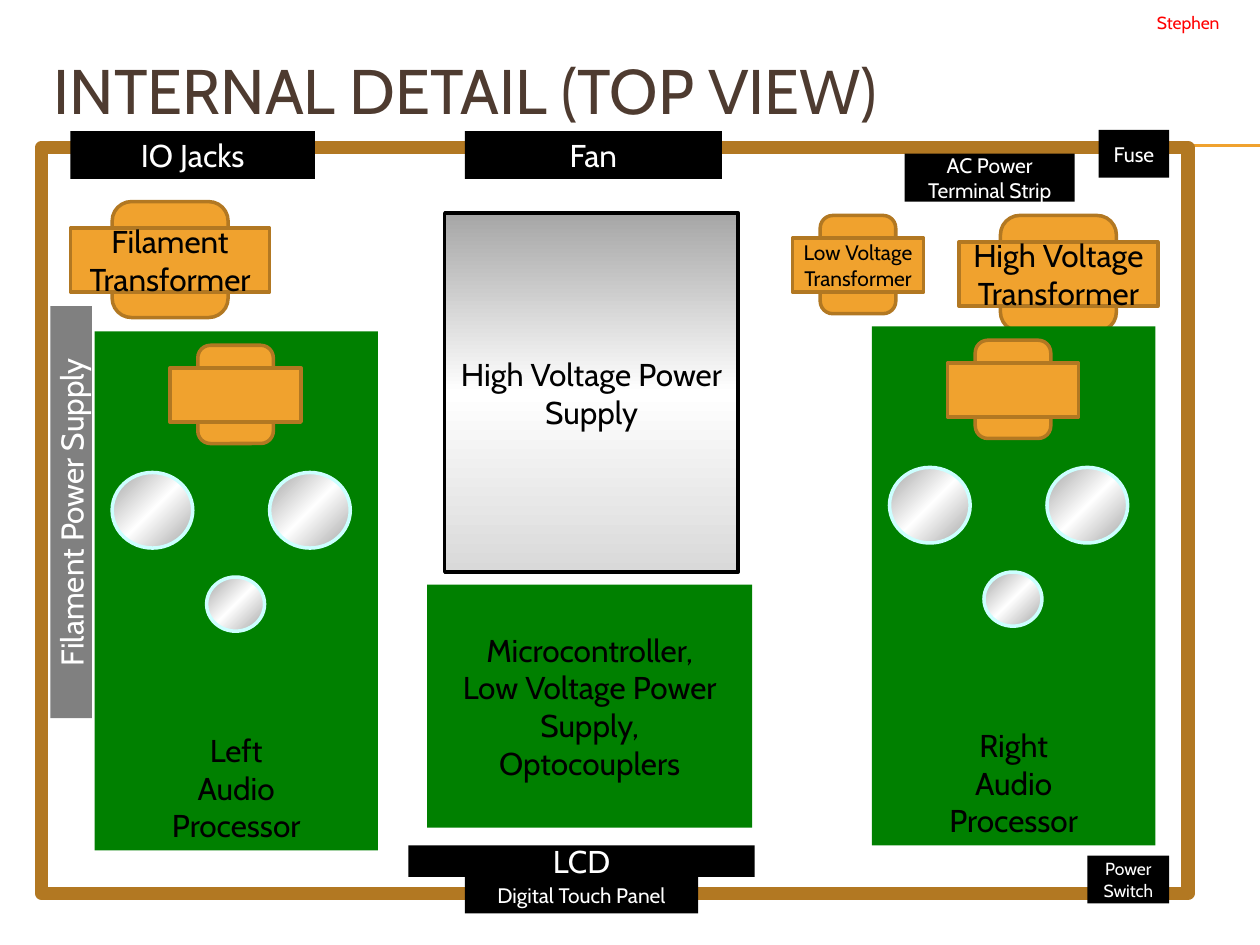
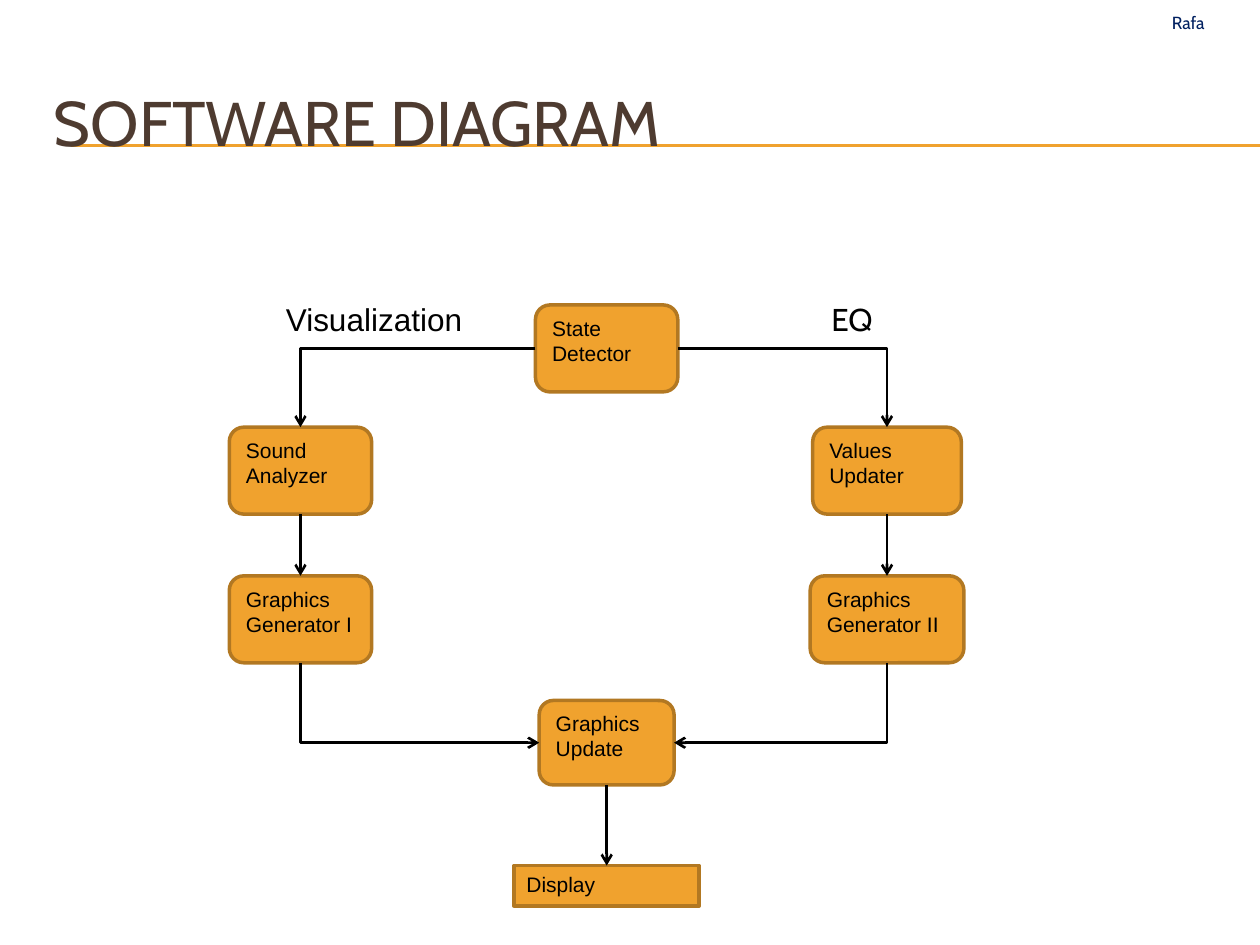
from pptx import Presentation
from pptx.dml.color import RGBColor
from pptx.enum.shapes import MSO_CONNECTOR, MSO_SHAPE
from pptx.enum.text import MSO_ANCHOR, PP_ALIGN
from pptx.oxml import parse_xml
from pptx.oxml.ns import nsdecls, qn
from pptx.util import Inches, Pt

BLACK, WHITE, RED, NAVY = "000000", "FFFFFF", "FF0000", "002060"
AMBER, BROWN, GREEN, GREY = "F0A22E", "B27822", "008000", "808080"
RIM, TITLE = "CCFFFF", "4E3B30"
RECT, ROUND, OVAL = MSO_SHAPE.RECTANGLE, MSO_SHAPE.ROUNDED_RECTANGLE, MSO_SHAPE.OVAL
LEFT, CENTER, JUSTIFY = PP_ALIGN.LEFT, PP_ALIGN.CENTER, PP_ALIGN.JUSTIFY
TOP, MIDDLE, BOTTOM = MSO_ANCHOR.TOP, MSO_ANCHOR.MIDDLE, MSO_ANCHOR.BOTTOM
MARGINS = ("margin_left", "margin_top", "margin_right", "margin_bottom")

# Gradients: stops as (percent, colour), then the direction
STEEL = ([(0, "A6A6A6"), (50, WHITE), (100, "D9D9D9")],
         '<a:lin ang="5400000" scaled="0"/>')
GLASS = ([(0, "A6A6A6"), (50, WHITE), (100, "A6A6A6")],
         '<a:path path="circle"><a:fillToRect l="100000" t="100000"/></a:path>')

# Internal detail: label, box (left, top, width, height), text size
PANELS = [
    ("Digital Touch Panel", (3.69, 6.96, 1.85, 0.29), 12),
    ("IO Jacks", (0.56, 1.04, 1.94, 0.38), 18),
    ("Fan", (3.69, 1.04, 2.04, 0.38), 18),
    ("AC Power\nTerminal Strip", (7.18, 1.22, 1.35, 0.38), 12),
    ("Fuse", (8.72, 1.03, 0.56, 0.38), 12),
    ("LCD", (3.24, 6.71, 2.75, 0.25), 18),
    ("Power Switch", (8.63, 6.79, 0.65, 0.38), 10),
]
# Transformer sizes: core (offset and size), coil size, text size, margin
LARGE = ((0.33, -0.21, 0.92, 0.92), (1.58, 0.51), 18, None)
SMALL = ((0.22, -0.18, 0.6, 0.78), (1.04, 0.43), 12, 0)
COILS = [
    ("High Voltage Transformer", 7.61, 1.92, LARGE),
    ("Low Voltage Transformer", 6.29, 1.89, SMALL),
    ("Filament\nTransformer", 0.56, 1.81, LARGE),
]
BOARDS = [("Left\nAudio\nProcessor", 0.75, 2.63), ("Right\nAudio\nProcessor", 6.92, 2.59)]
TUBES = [(0.14, 1.12, 0.64, 0.6), (1.39, 1.12, 0.64, 0.6), (0.89, 1.95, 0.46, 0.43)]

# Software diagram
STEPS = {
    "Graphics Update": (4.28, 5.56, 1.07, 0.67),
    "Graphics Generator II": (6.43, 4.57, 1.22, 0.69),
    "Values Updater": (6.45, 3.39, 1.18, 0.69),
    "Graphics Generator I": (1.82, 4.57, 1.13, 0.69),
    "Sound Analyzer": (1.82, 3.39, 1.13, 0.69),
    "State Detector": (4.25, 2.42, 1.13, 0.69),
    "Display": (4.08, 6.87, 1.47, 0.32),
}
# Connection sites of a box
UP, WEST, DOWN, EAST = range(4)
# Begin and end (step, site), arrow end; bends leave the begin sideways
STRAIGHT, BENT = MSO_CONNECTOR.STRAIGHT, MSO_CONNECTOR.ELBOW
FLOWS = [
    (STRAIGHT, "Sound Analyzer", DOWN, "Graphics Generator I", UP, "tail"),
    (STRAIGHT, "Values Updater", DOWN, "Graphics Generator II", UP, "tail"),
    (STRAIGHT, "Graphics Update", DOWN, "Display", UP, "tail"),
    (BENT, "State Detector", WEST, "Sound Analyzer", UP, "tail"),
    (BENT, "State Detector", EAST, "Values Updater", UP, "tail"),
    (BENT, "Graphics Update", WEST, "Graphics Generator I", DOWN, "head"),
    (BENT, "Graphics Update", EAST, "Graphics Generator II", DOWN, "head"),
]
BRANCHES = [("EQ", (6.5, 2.33, 0.58, 0.4), "Cabin"),
            ("Visualization", (2.17, 2.33, 1.92, 0.71), "Arial")]


def color(code):
    return RGBColor.from_string(code)


def assign(obj, values):
    for name, value in values.items():
        setattr(obj, name, value)


def write(shape, text, size, ink=BLACK, font="Cabin", align=CENTER, anchor=MIDDLE,
          margin=None):
    frame = shape.text_frame
    frame.text = text
    assign(frame, {"word_wrap": True, "vertical_anchor": anchor})
    if margin is not None:
        assign(frame, dict.fromkeys(MARGINS, Inches(margin)))
    for para in frame.paragraphs:
        para.alignment = align
        assign(para.font, {"name": font, "size": Pt(size)})
        para.font.color.rgb = color(ink)


def shade(shape, stops, way):
    """Fill a shape with a gradient of several stops."""
    shape.fill.background()
    marks = "".join(f'<a:gs pos="{at * 1000}"><a:srgbClr val="{code}"/></a:gs>'
                    for at, code in stops)
    props = shape._element.spPr
    props.replace(props.find(qn("a:noFill")), parse_xml(
        f'<a:gradFill {nsdecls("a")} rotWithShape="1"><a:gsLst>{marks}</a:gsLst>{way}</a:gradFill>'))


def draw(slide, kind, box, fill, line=None, width=2):
    shape = slide.shapes.add_shape(kind, *map(Inches, box))
    shape.shadow.inherit = False
    if isinstance(fill, tuple):
        shade(shape, *fill)
    else:
        shape.fill.solid()
        shape.fill.fore_color.rgb = color(fill)
    if line:
        shape.line.color.rgb = color(line)
        shape.line.width = Pt(width)
    else:
        shape.line.fill.background()
    return shape


def label(slide, text, box, size, **look):
    write(slide.shapes.add_textbox(*map(Inches, box)), text, size, **look)


def link(slide, kind, ends, ink, width):
    line = slide.shapes.add_connector(kind, *map(Inches, ends))
    line.line.color.rgb = color(ink)
    line.line.width = Pt(width)
    line._element.spPr.append(parse_xml(f'<a:effectLst {nsdecls("a")}/>'))
    return line


def start(deck, title, top, author, ink):
    """Add a slide with the double rule, the title and the author."""
    slide = deck.slides.add_slide(deck.slide_layouts[6])
    for y in (1.15, 1.16):
        link(slide, STRAIGHT, (0.56, y, 10, y), AMBER, 0.75)
    label(slide, title, (0.33, top, 9.5, 0.92), 36, ink=TITLE, align=LEFT)
    return slide, lambda: label(slide, author, (8.89, 0.05, 1.08, 0.27), 10,
                                ink=ink, anchor=TOP)


def coil(slide, text, x, y, model):
    (dx, dy, w, h), body, size, margin = model
    draw(slide, ROUND, (x + dx, y + dy, w, h), AMBER, BROWN)
    shape = draw(slide, RECT, (x, y, *body), AMBER, BROWN)
    if text:
        write(shape, text, size, margin=margin)


def board(slide, text, x, y):
    write(draw(slide, RECT, (x, y, 2.25, 4.12), GREEN), text, 18, anchor=BOTTOM)
    coil(slide, "", x + 0.6, y + 0.29, SMALL)
    for dx, dy, w, h in TUBES:
        draw(slide, OVAL, (x + dx, y + dy, w, h), GLASS, RIM)


def detail(deck):
    slide, sign = start(deck, "INTERNAL DETAIL (TOP VIEW)", 0.25, "Stephen", RED)
    draw(slide, RECT, (0.33, 1.17, 9.1, 5.92), WHITE, BROWN, 7.5)
    supply = draw(slide, RECT, (3.53, 1.69, 2.33, 2.85), STEEL, BLACK)
    write(supply, "High Voltage Power Supply", 18)
    logic = draw(slide, RECT, (3.39, 4.64, 2.58, 1.93), GREEN)
    write(logic, "Microcontroller,\nLow Voltage Power Supply,\nOptocouplers", 18)
    for text, box, size in PANELS:
        write(draw(slide, RECT, box, BLACK), text, size, ink=WHITE)
    for item in COILS:
        coil(slide, *item)
    heater = draw(slide, RECT, (0.4, 2.43, 0.33, 3.27), GREY)
    write(heater, "Filament Power Supply", 18, ink=WHITE)
    heater.text_frame._txBody.bodyPr.set("vert", "vert270")
    for item in BOARDS:
        board(slide, *item)
    sign()


def diagram(deck):
    slide, sign = start(deck, "SOFTWARE DIAGRAM", 0.5, "Rafa", NAVY)
    steps = {}
    for text, box in STEPS.items():
        kind = RECT if text == "Display" else ROUND
        steps[text] = draw(slide, kind, box, AMBER, BROWN)
        write(steps[text], text, 12, font="Arial", align=JUSTIFY, anchor=TOP)
    for kind, begin, out, end, into, tip in FLOWS:
        line = link(slide, kind, (0, 0, 1, 1), BLACK, 1.5)
        line.begin_connect(steps[begin], out)
        line.end_connect(steps[end], into)
        if kind == BENT:
            line._element.spPr.find(qn("a:prstGeom")).set("prst", "bentConnector2")
        line.line._get_or_add_ln().append(
            parse_xml(f'<a:{tip}End {nsdecls("a")} type="arrow"/>'))
    for text, box, font in BRANCHES:
        label(slide, text, box, 18, font=font, align=LEFT, anchor=TOP)
    sign()


def main():
    deck = Presentation()
    assign(deck, {"slide_width": Inches(10), "slide_height": Inches(7.5)})
    detail(deck)
    diagram(deck)
    deck.save("out.pptx")


if __name__ == "__main__":
    main()
